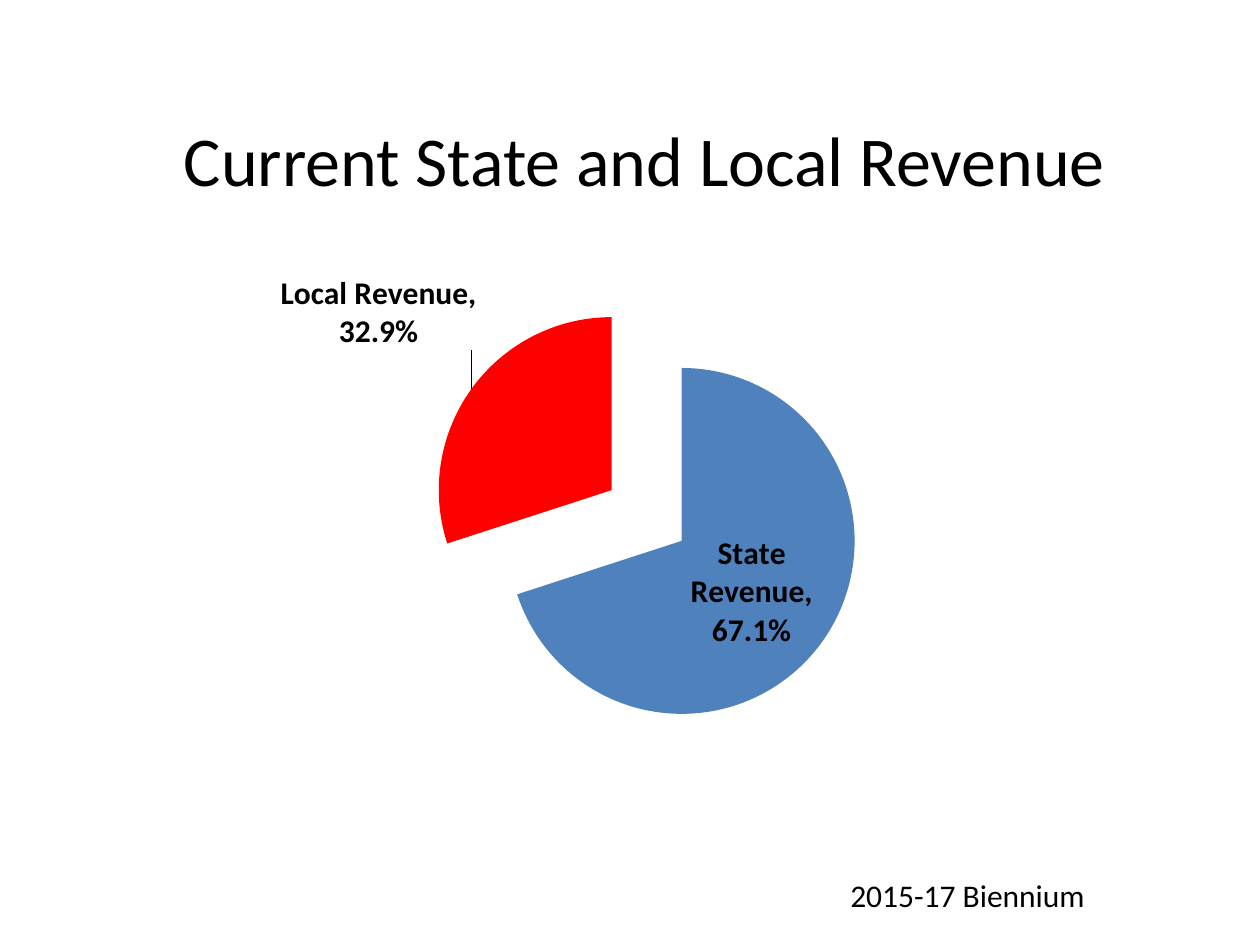
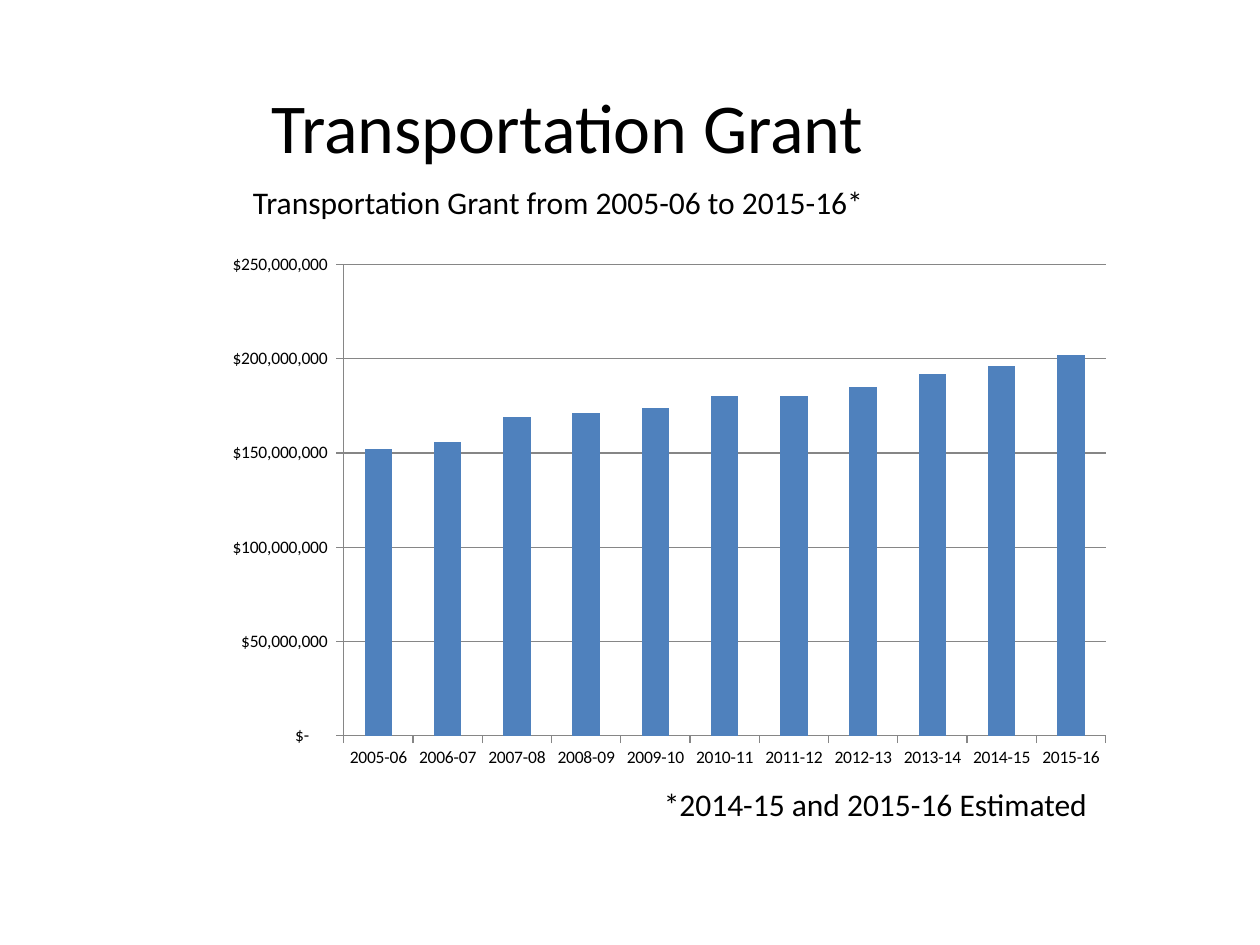
from lxml import etree
from pptx import Presentation
from pptx.chart.data import CategoryChartData
from pptx.dml.color import RGBColor
from pptx.enum.chart import XL_CHART_TYPE as CT, XL_LABEL_POSITION as LP
from pptx.enum.text import MSO_ANCHOR, MSO_AUTO_SIZE, PP_ALIGN
from pptx.oxml import parse_xml
from pptx.oxml.ns import nsdecls, qn
from pptx.util import Inches, Pt

COLORS = {"text": "000000", "blue": "4F81BD", "red": "FF0000", "grid": "868686"}
FONT = "Calibri"
DOLLARS = '_("$"* #,##0_);_("$"* \\(#,##0\\);_("$"* "-"??_);_(@_)'


def rgb(name):
    return RGBColor.from_string(COLORS[name])


def write(tf, text, size=18, bold=False, align=None):
    """Fill a text frame, one paragraph per line of text."""
    tf.text = text
    for p in tf.paragraphs:
        p.alignment = align
        for r in p.runs:
            r.font.name, r.font.size, r.font.bold = FONT, Pt(size), bold
            r.font.color.rgb = rgb("text")


prs = Presentation()
prs.slide_width, prs.slide_height = Inches(10), Inches(7.5)

# Title, its box, then (text, box, wrap) for each caption
pages = [
    ("Current State and Local Revenue", (0.35, 0.76, 9.53, 1),
     [("2015-17 Biennium", (6.65, 6.9, 2.08, 0.4), False)]),
    ("Transportation Grant", (0.75, 0.58, 7.51, 0.83),
     [("Transportation Grant from 2005-06 to 2015-16*", (1.91, 1.4, 5.6, 0.4), True),
      ("*2014-15 and 2015-16 Estimated", (5.17, 6.18, 3.57, 0.4), False)]),
]
for title, box, captions in pages:
    s = prs.slides.add_slide(prs.slide_layouts[5])
    sp = s.shapes.title
    sp.left, sp.top, sp.width, sp.height = map(Inches, box)
    sp.text_frame.vertical_anchor = MSO_ANCHOR.MIDDLE
    write(sp.text_frame, title, size=40, align=PP_ALIGN.CENTER)
    for text, place, wrap in captions:
        tf = s.shapes.add_textbox(*map(Inches, place)).text_frame
        tf.word_wrap = wrap
        tf.auto_size = MSO_AUTO_SIZE.SHAPE_TO_FIT_TEXT
        write(tf, text)

# Chart type, box, categories, values, inner plot area as fractions of the chart
years = [f"{2000 + y}-{y + 1:02}" for y in range(5, 16)]
grants = [m * 1_000_000 for m in (152, 156, 169, 171, 174, 180, 180, 185, 192, 196, 202)]
charts = []
for s, (kind, box, cats, values, area) in zip(prs.slides, [
    (CT.PIE, (0.5, 2, 8.58, 4.5), ["1", "2"], [70, 30], (0.34, 0.08, 0.4, 0.77)),
    (CT.COLUMN_CLUSTERED, (1.67, 1.93, 7.25, 4.25), years, grants, (0.146, 0.04, 0.834, 0.88)),
]):
    data = CategoryChartData()
    data.categories = cats
    data.add_series("Series 1", values)
    chart = s.shapes.add_chart(kind, *map(Inches, box), data).chart
    chart.has_title = chart.has_legend = False
    chart.font.name, chart.font.size = FONT, Pt(10)
    chart.font.color.rgb = rgb("text")
    plot_area = chart.plots[0].series[0].format and chart._chartSpace.chart.plotArea
    for old in plot_area.findall(qn("c:layout")):
        plot_area.remove(old)
    sizes = "".join(f'<c:{tag} val="{v}"/>' for tag, v in zip("xywh", area))
    plot_area.insert(0, parse_xml(
        f'<c:layout {nsdecls("c")}><c:manualLayout><c:layoutTarget val="inner"/>'
        f'<c:xMode val="edge"/><c:yMode val="edge"/>{sizes}</c:manualLayout></c:layout>'))
    charts.append(chart)
pie, columns = charts

# Exploded revenue slices with their own labels
revenue = pie.plots[0].series[0]
pie.plots[0].vary_by_categories = True
slices = [("State Revenue,\n67.1%", "blue", LP.CENTER),
          ("Local Revenue,\n32.9%", "red", LP.OUTSIDE_END)]
for i, (text, color, position) in enumerate(slices):
    point = revenue.points[i]
    point.format.fill.solid()
    point.format.fill.fore_color.rgb = rgb(color)
    write(point.data_label.text_frame, text, bold=True)
    point.data_label.position = position
explosion = etree.Element(qn("c:explosion"), val="25")
revenue._element.find(qn("c:dPt")).addprevious(explosion)
local_label = revenue._element.findall(".//" + qn("c:dLbl"))[1]
local_label.find(qn("c:idx")).addnext(parse_xml(
    f'<c:layout {nsdecls("c")}><c:manualLayout><c:x val="0.01"/><c:y val="-0.06"/>'
    '</c:manualLayout></c:layout>'))

# Yearly grant columns
plot = columns.plots[0]
plot.gap_width, plot.vary_by_categories = 150, False
plot.series[0].format.fill.solid()
plot.series[0].format.fill.fore_color.rgb = rgb("blue")
val_axis = columns.value_axis
val_axis.minimum_scale, val_axis.maximum_scale = 0, 250_000_000
val_axis.major_unit = 50_000_000
val_axis.has_major_gridlines = True
val_axis.tick_labels.number_format = DOLLARS
val_axis.tick_labels.number_format_is_linked = False
for part in (val_axis, columns.category_axis, val_axis.major_gridlines):
    part.format.line.color.rgb = rgb("grid")
    part.format.line.width = Pt(0.75)

prs.save("out.pptx")
